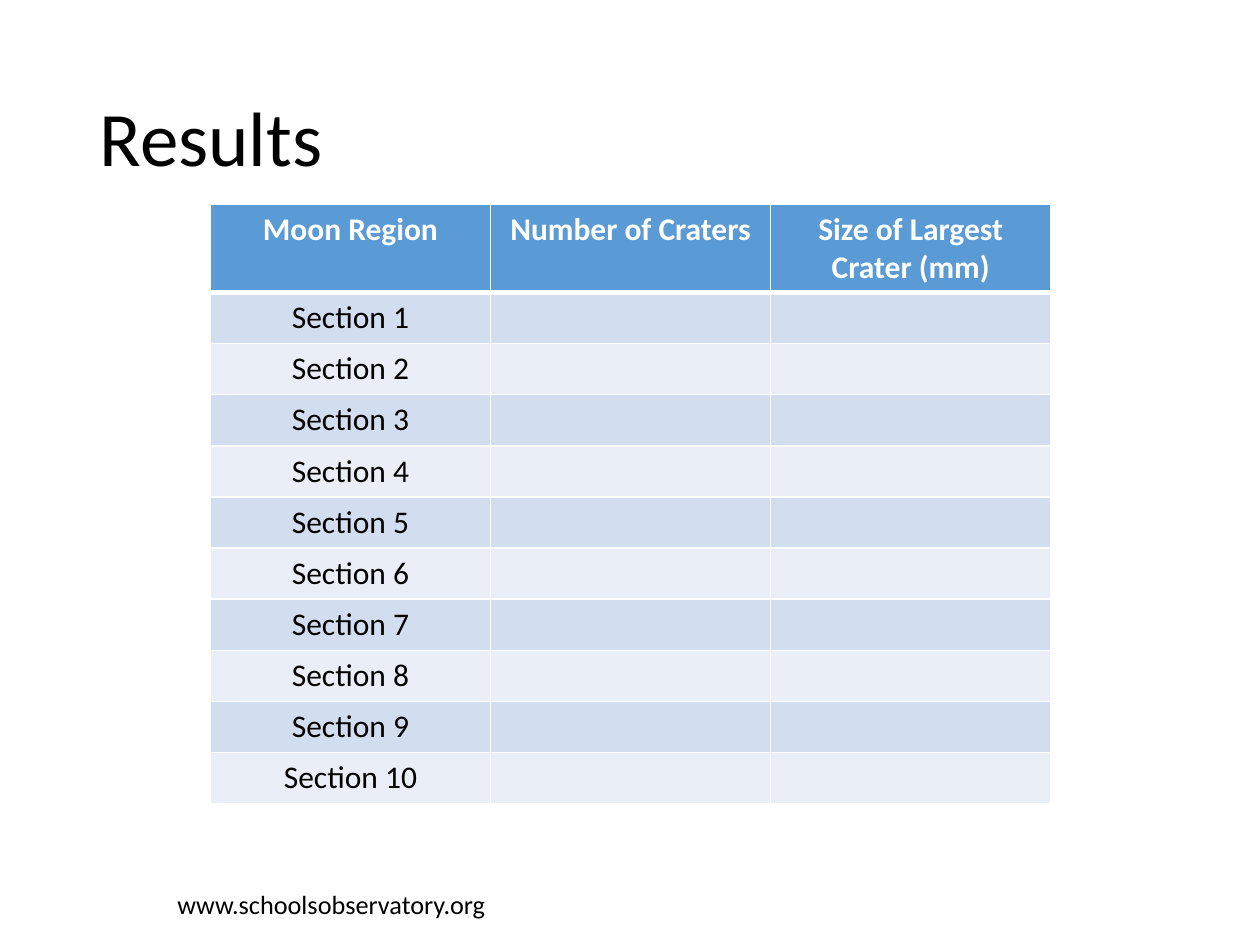
from lxml import etree
from pptx import Presentation
from pptx.dml.color import RGBColor
from pptx.enum.text import MSO_ANCHOR, PP_ALIGN
from pptx.oxml.ns import qn
from pptx.util import Inches, Pt

LEFT, CENTER = PP_ALIGN.LEFT, PP_ALIGN.CENTER
TOP, MIDDLE = MSO_ANCHOR.TOP, MSO_ANCHOR.MIDDLE
TITLE_ONLY = 5

TITLE = "Results"
FOOTER = "www.schoolsobservatory.org"
HEADINGS = ["Moon Region", "Number of Craters", "Size of Largest Crater (mm)"]
SECTIONS = [f"Section {number}" for number in range(1, 11)]

THEME = {
    "font": "Calibri",
    "text": "000000",
    "header_text": "FFFFFF",
    "header_fill": "5B9BD5",
    "bands": ("D2DEEF", "EAEFF7"),
    "border": "FFFFFF",
    "title_size": 44,
    "table_size": 18,
    "footer_size": 15,
}

TITLE_BOX = (0.69, 0.4, 8.62, 1.45)
FOOTER_BOX = (1.31, 7.03, 6.54, 0.4)
TABLE_BOX = (1.67, 1.62, 6.67, 4.76)
HEADER_HEIGHT = 0.7
THIN, THICK = 1, 3


def write(frame, text, size, color=THEME["text"], bold=False, align=LEFT,
          anchor=TOP, spacing=None):
    frame.word_wrap = True
    frame.vertical_anchor = anchor
    paragraph = frame.paragraphs[0]
    paragraph.alignment = align
    paragraph.line_spacing = spacing
    paragraph.font.size = Pt(size)
    if not text:
        return
    run = paragraph.add_run()
    run.text = text
    run.font.name = THEME["font"]
    run.font.size = Pt(size)
    run.font.bold = bold
    run.font.color.rgb = RGBColor.from_string(color)


def add_borders(cell, top, bottom):
    """Draw the four cell edges; must run before the cell gets its fill."""
    properties = cell._tc.get_or_add_tcPr()
    widths = {"a:lnL": THIN, "a:lnR": THIN, "a:lnT": top, "a:lnB": bottom}
    for edge, width in widths.items():
        line = etree.SubElement(properties, qn(edge), w=str(Pt(width)))
        fill = etree.SubElement(line, qn("a:solidFill"))
        etree.SubElement(fill, qn("a:srgbClr"), val=THEME["border"])


def add_title(slide):
    title = slide.shapes.title
    title.left, title.top, title.width, title.height = map(Inches, TITLE_BOX)
    write(title.text_frame, TITLE, THEME["title_size"], anchor=MIDDLE, spacing=0.9)


def add_results_table(slide):
    rows = [HEADINGS] + [[section, "", ""] for section in SECTIONS]
    table = slide.shapes.add_table(
        len(rows), len(HEADINGS), *map(Inches, TABLE_BOX)).table
    width, height = TABLE_BOX[2:]
    for column in table.columns:
        column.width = Inches(width / len(HEADINGS))
    body_height = (height - HEADER_HEIGHT) / len(SECTIONS)

    for row_index, labels in enumerate(rows):
        is_header = row_index == 0
        table.rows[row_index].height = Inches(HEADER_HEIGHT if is_header else body_height)
        fill = THEME["header_fill"] if is_header else THEME["bands"][(row_index - 1) % 2]
        color = THEME["header_text"] if is_header else THEME["text"]
        for column_index, label in enumerate(labels):
            cell = table.cell(row_index, column_index)
            add_borders(cell, top=THICK if row_index == 1 else THIN,
                        bottom=THICK if is_header else THIN)
            cell.fill.solid()
            cell.fill.fore_color.rgb = RGBColor.from_string(fill)
            write(cell.text_frame, label, THEME["table_size"], color=color,
                  bold=is_header, align=CENTER)


def add_footer(slide):
    footer = slide.shapes.add_textbox(*map(Inches, FOOTER_BOX))
    write(footer.text_frame, FOOTER, THEME["footer_size"], spacing=0.9)


def main():
    presentation = Presentation()
    presentation.slide_width = Inches(10)
    presentation.slide_height = Inches(7.5)
    slide = presentation.slides.add_slide(presentation.slide_layouts[TITLE_ONLY])
    add_footer(slide)
    add_title(slide)
    add_results_table(slide)
    presentation.save("out.pptx")


if __name__ == "__main__":
    main()
